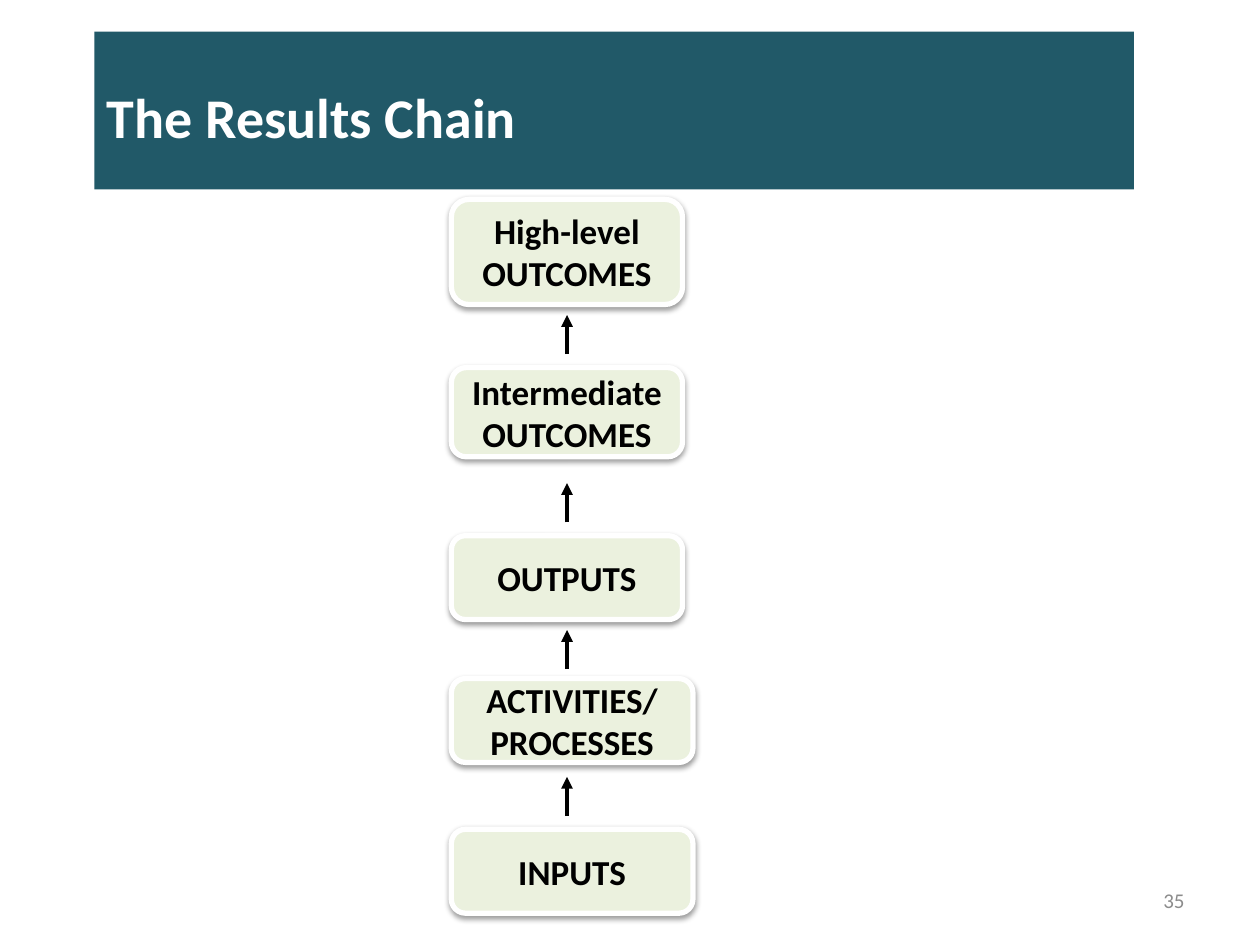
from lxml.etree import SubElement
from pptx import Presentation
from pptx.dml.color import RGBColor
from pptx.enum.shapes import MSO_CONNECTOR as Link, MSO_SHAPE as Shape
from pptx.enum.text import MSO_ANCHOR as Anchor, PP_ALIGN as Align
from pptx.oxml import parse_xml
from pptx.oxml.ns import nsdecls, qn
from pptx.util import Cm, Pt

TEAL = RGBColor(0x21, 0x59, 0x68)
GREEN = RGBColor(0xEB, 0xF1, 0xDE)
WHITE = RGBColor(0xFF, 0xFF, 0xFF)
BLACK = RGBColor(0x00, 0x00, 0x00)
GREY = RGBColor(0x8C, 0x8C, 0x8C)

LEFT = 9.1
STEPS = [
    ("INPUTS", 16.72, 4.87, 1.69),
    ("ACTIVITIES/ PROCESSES", 13.68, 4.87, 1.69),
    ("OUTPUTS", 10.8, 4.66, 1.69),
    ("Intermediate\nOUTCOMES", 7.41, 4.66, 1.8),
    ("High-level\nOUTCOMES", 4.02, 4.66, 2.12),
]
AXIS = 11.43
RISE = 0.79
TIPS = [6.35, 9.74, 15.66, 12.7]
SHADOW = (
    f'<a:effectLst {nsdecls("a")}>'
    '<a:outerShdw blurRad="40000" dist="20000" dir="5400000" rotWithShape="0">'
    '<a:srgbClr val="000000"><a:alpha val="38000"/></a:srgbClr>'
    '</a:outerShdw></a:effectLst>'
)


def write(shape, text, size, color, align, bold=True):
    """Fill a shape with text in one style."""
    frame = shape.text_frame
    frame.word_wrap = True
    frame.vertical_anchor = Anchor.MIDDLE
    frame.text = text
    for para in frame.paragraphs:
        para.alignment = align
        for run in para.runs:
            font = run.font
            font.name = "Calibri"
            font.size = Pt(size)
            font.bold = bold
            font.color.rgb = color


def paint(shape, color):
    """Give a shape a solid fill."""
    shape.fill.solid()
    shape.fill.fore_color.rgb = color


def add_title(slide, text):
    """Turn the title placeholder into the teal banner."""
    title = slide.shapes.title
    title.left, title.top = Cm(1.9), Cm(0.64)
    title.width, title.height = Cm(20.96), Cm(3.18)
    paint(title, TEAL)
    write(title, text, 32, WHITE, Align.LEFT)
    title.text_frame.paragraphs[0].line_spacing = 1.15


def add_step(slide, text, top, width, height):
    """Add one rounded step of the chain."""
    box = slide.shapes.add_shape(
        Shape.ROUNDED_RECTANGLE, Cm(LEFT), Cm(top), Cm(width), Cm(height))
    paint(box, GREEN)
    box.line.color.rgb = WHITE
    box.line.width = Pt(3)
    box._element.spPr.append(parse_xml(SHADOW))
    write(box, text, 20, BLACK, Align.CENTER)


def add_arrow(slide, tip):
    """Add an upward arrow between two steps."""
    arrow = slide.shapes.add_connector(
        Link.STRAIGHT, Cm(AXIS), Cm(tip + RISE), Cm(AXIS), Cm(tip))
    arrow.line.color.rgb = BLACK
    arrow.line.width = Pt(2.25)
    SubElement(arrow.line._get_or_add_ln(), qn("a:tailEnd"), type="triangle")
    SubElement(arrow._element.spPr, qn("a:effectLst"))


def add_number(slide, text):
    """Add the page number."""
    box = slide.shapes.add_textbox(Cm(18.2), Cm(17.65), Cm(5.93), Cm(1.01))
    write(box, text, 12, GREY, Align.RIGHT, False)


def main():
    """Build the slide and save it."""
    deck = Presentation()
    deck.slide_width, deck.slide_height = Cm(25.4), Cm(19.05)
    slide = deck.slides.add_slide(deck.slide_layouts[5])
    add_title(slide, "The Results Chain")
    for step in STEPS:
        add_step(slide, *step)
    for tip in TIPS:
        add_arrow(slide, tip)
    add_number(slide, "35")
    deck.save("out.pptx")


if __name__ == "__main__":
    main()
